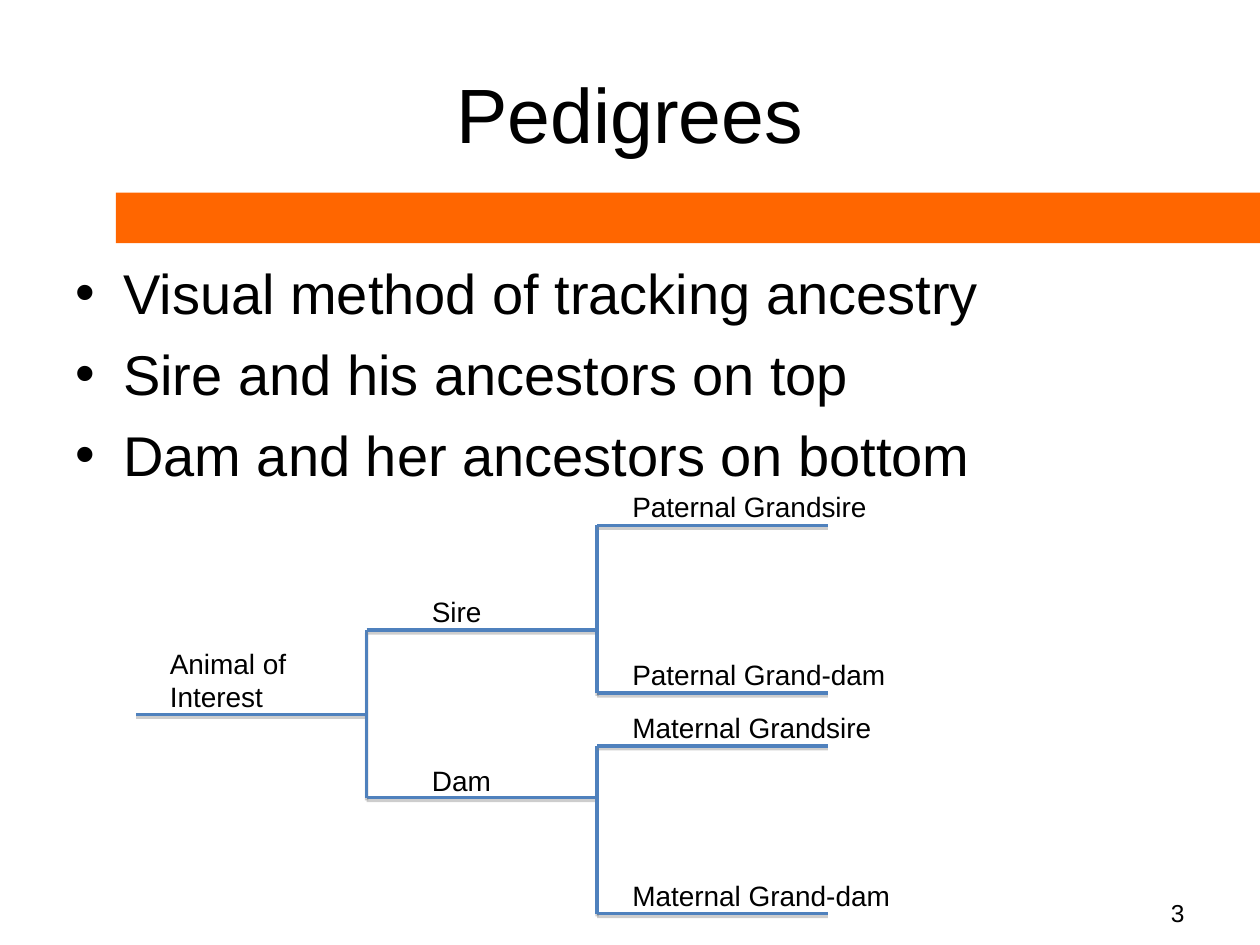
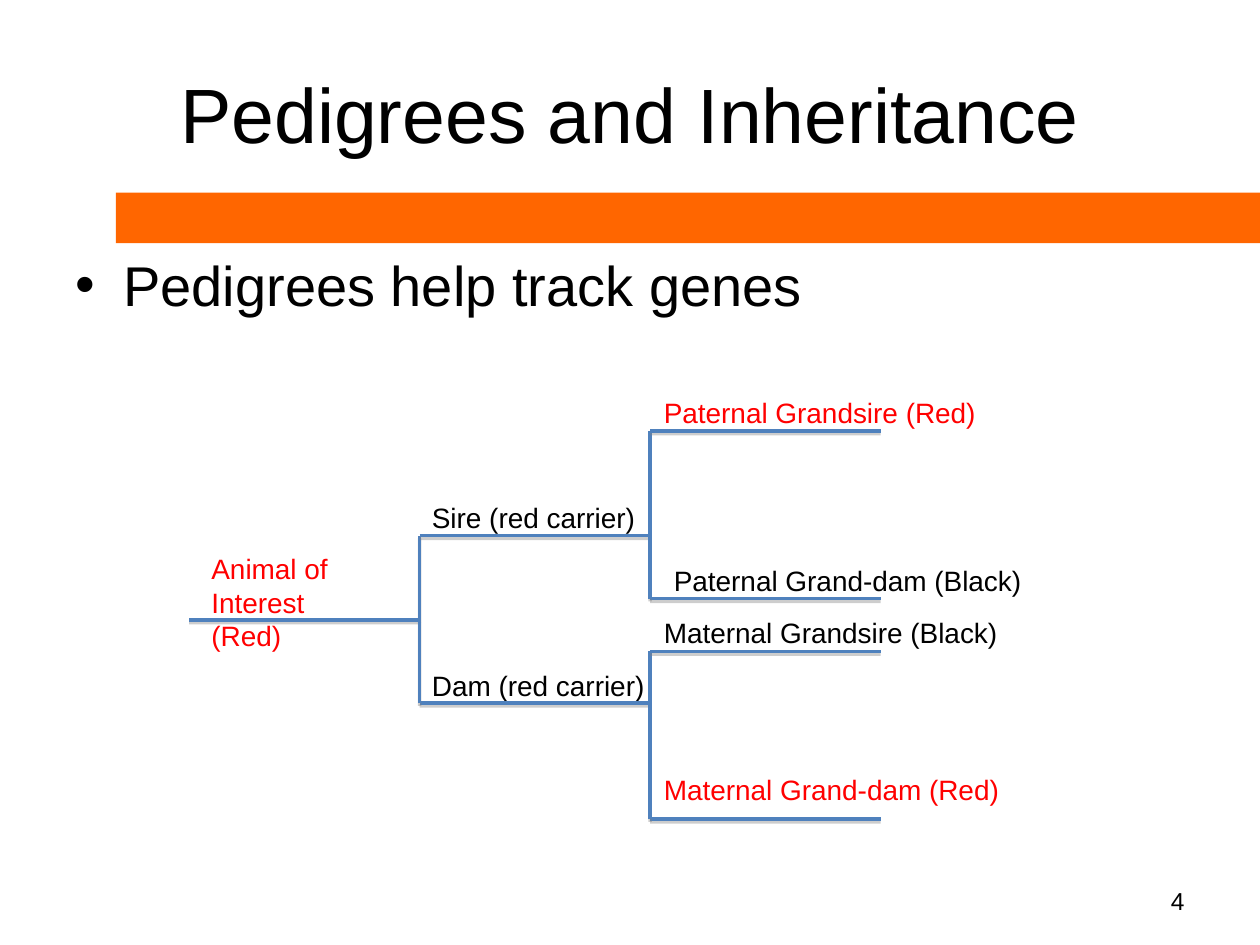
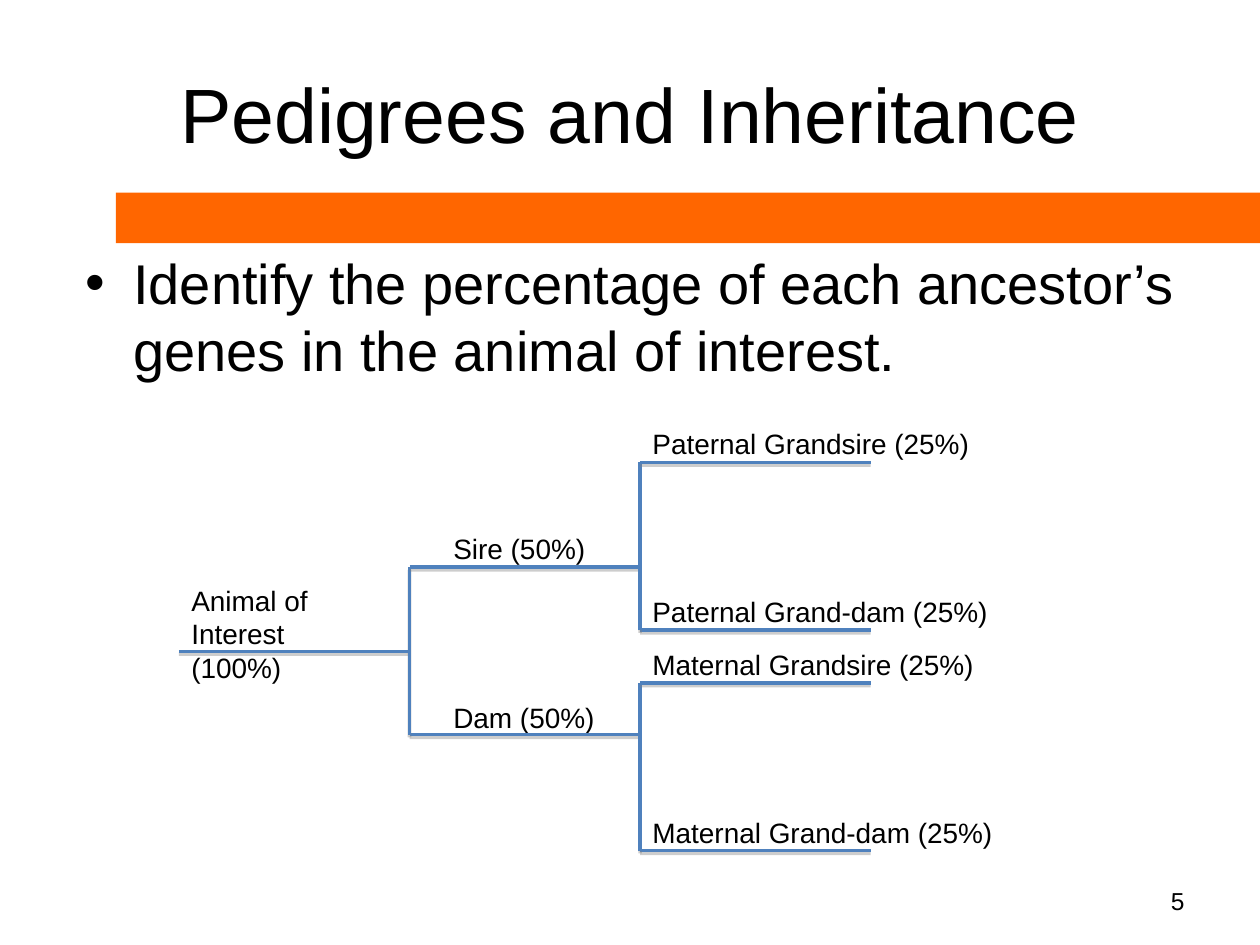
from pptx import Presentation
from pptx import util as u
from pptx.dml.color import RGBColor
from pptx.enum import shapes, text
from pptx.oxml.ns import qn
from lxml import etree

BLACK = RGBColor(0x00, 0x00, 0x00)
RED = RGBColor(0xFF, 0x00, 0x00)
ORANGE = RGBColor(0xFF, 0x66, 0x00)
BLUE = RGBColor(0x4F, 0x81, 0xBD)
SHADOW = "808080"
FONT = "Arial"

BRANCH = 1.83
SPAN = 1.33
INDENT = 0.38
LABEL_RISE = 0.33
LABEL_HEIGHT = 0.37
LINE_OFFSETS = (-0.67, 0.67, -1.5, -0.17, 0.25, 1.58)


def write(p, content, size=16, color=BLACK, align=text.PP_ALIGN.LEFT):
    p.alignment = align
    r = p.add_run()
    r.text = content
    r.font.name = FONT
    r.font.size = u.Pt(size)
    r.font.color.rgb = color


def add_bullet(p):
    pPr = p._p.get_or_add_pPr()
    pPr.set("marL", str(u.Inches(INDENT)))
    pPr.set("indent", str(-u.Inches(INDENT)))
    etree.SubElement(pPr, qn("a:buFont")).set("typeface", FONT)
    etree.SubElement(pPr, qn("a:buChar")).set("char", "•")


def add_shadow(sp):
    effects = etree.SubElement(sp._element.spPr, qn("a:effectLst"))
    outer = etree.SubElement(effects, qn("a:outerShdw"), blurRad="0",
                             dist=str(u.Pt(1.6)), dir="5400000", rotWithShape="0")
    color = etree.SubElement(outer, qn("a:srgbClr"), val=SHADOW)
    etree.SubElement(color, qn("a:alpha"), val="38000")


class Deck:
    def __init__(self):
        self.prs = Presentation()
        self.prs.slide_width = u.Inches(10)
        self.prs.slide_height = u.Inches(7.5)
        self.s = None

    def slide(self, title, number, number_top=6.95, number_height=0.4):
        self.s = self.prs.slides.add_slide(self.prs.slide_layouts[5])
        self.band()
        self.title(title)
        tf = self.box(self.s, 7.17, number_top, 2.33, number_height)
        tf.vertical_anchor = text.MSO_ANCHOR.MIDDLE
        write(tf.paragraphs[0], str(number), size=14, align=text.PP_ALIGN.RIGHT)

    def band(self):
        sp = self.s.shapes.add_shape(shapes.MSO_SHAPE.RECTANGLE, u.Inches(0.92),
                                     u.Inches(1.53), u.Inches(9.08), u.Inches(0.4))
        sp.shadow.inherit = False
        sp.fill.solid()
        sp.fill.fore_color.rgb = ORANGE
        sp.line.fill.background()

    def title(self, content):
        sp = self.s.shapes.title
        sp.left, sp.top = u.Inches(0.5), u.Inches(0.3)
        sp.width, sp.height = u.Inches(9), u.Inches(1.19)
        sp.text_frame.vertical_anchor = text.MSO_ANCHOR.MIDDLE
        write(sp.text_frame.paragraphs[0], content, size=44, align=text.PP_ALIGN.CENTER)

    def box(self, parent, left, top, width, height, wrap=True):
        sp = parent.shapes.add_textbox(u.Inches(left), u.Inches(top),
                                       u.Inches(width), u.Inches(height))
        sp.text_frame.word_wrap = wrap
        return sp.text_frame

    def bullets(self, items, left, top, height):
        tf = self.box(self.s, left, top, 9, height)
        for i, item in enumerate(items):
            p = tf.add_paragraph() if i else tf.paragraphs[0]
            add_bullet(p)
            if i:
                p.space_before = u.Pt(8)
            write(p, item, size=32)

    def line(self, parent, x1, y1, x2, y2):
        sp = parent.shapes.add_connector(shapes.MSO_CONNECTOR.STRAIGHT, u.Inches(x1),
                                         u.Inches(y1), u.Inches(x2), u.Inches(y2))
        sp.line.color.rgb = BLUE
        sp.line.width = u.Pt(2)
        add_shadow(sp)

    def fork(self, parent, x, top):
        middle, bottom = top + SPAN / 2, top + SPAN
        self.line(parent, x, middle, x, top)
        self.line(parent, x, top, x + BRANCH, top)
        self.line(parent, x, bottom, x + BRANCH, bottom)
        self.line(parent, x, bottom, x, middle)

    def tree(self, x, y):
        grp = self.s.shapes.add_group_shape()
        self.line(grp, x, y, x + BRANCH, y)
        self.fork(grp, x + BRANCH, y - 0.67)
        for offset in (-1.5, 0.25):
            self.fork(grp, x + 2 * BRANCH, y + offset)

    def labels(self, y, animal, animal_x, ancestors, color=BLACK):
        grp = self.s.shapes.add_group_shape()
        tf = self.box(grp, animal_x, y - 0.59, 1.14, 0.64)
        write(tf.paragraphs[0], "Animal of", color=color)
        write(tf.add_paragraph(), animal, color=color)
        for offset, (content, x, width, *rest) in zip(LINE_OFFSETS, ancestors):
            ink, rise = (rest + [BLACK, LABEL_RISE][len(rest):])
            tf = self.box(grp, x, y + offset - rise, width, LABEL_HEIGHT, wrap=False)
            write(tf.paragraphs[0], content, color=ink)


def main():
    d = Deck()

    d.slide("Pedigrees", 3, number_top=6.98, number_height=0.52)
    d.bullets(["Visual method of tracking ancestry",
               "Sire and his ancestors on top",
               "Dam and her ancestors on bottom"], 0.5, 2, 2.17)
    d.tree(1.08, 5.67)
    d.labels(5.67, "Interest", 1.25, [
        ("Sire", 3.33, 0.6),
        ("Dam", 3.33, 0.68),
        ("Paternal Grandsire", 4.92, 2.09),
        ("Paternal Grand-dam", 4.92, 2.22),
        ("Maternal Grandsire", 4.92, 2.12),
        ("Maternal Grand-dam", 4.92, 2.25)])

    d.slide("Pedigrees and Inheritance", 4)
    d.bullets(["Pedigrees help track genes"], 0.5, 1.94, 4.82)
    d.labels(4.92, "Interest (Red)", 1.58, [
        ("Sire (red carrier)", 3.33, 1.84),
        ("Dam (red carrier)", 3.33, 1.91),
        ("Paternal Grandsire (Red)", 5.17, 2.68, RED),
        ("Paternal Grand-dam (Black)", 5.25, 2.97),
        ("Maternal Grandsire (Black)", 5.17, 2.86),
        ("Maternal Grand-dam (Red)", 5.17, 2.87, RED, 0.42)], color=RED)
    d.tree(1.5, 4.92)

    d.slide("Pedigrees and Inheritance", 5)
    d.bullets(["Identify the percentage of each ancestor’s genes in the animal of interest."],
              0.58, 1.92, 4.7)
    d.labels(5.17, "Interest (100%)", 1.42, [
        ("Sire (50%)", 3.5, 1.26),
        ("Dam (50%)", 3.5, 1.34),
        ("Paternal Grandsire (25%)", 5.08, 2.75),
        ("Paternal Grand-dam (25%)", 5.08, 2.87),
        ("Maternal Grandsire (25%)", 5.08, 2.78),
        ("Maternal Grand-dam (25%)", 5.08, 2.91)])
    d.tree(1.42, 5.17)

    d.prs.save("out.pptx")


if __name__ == "__main__":
    main()
